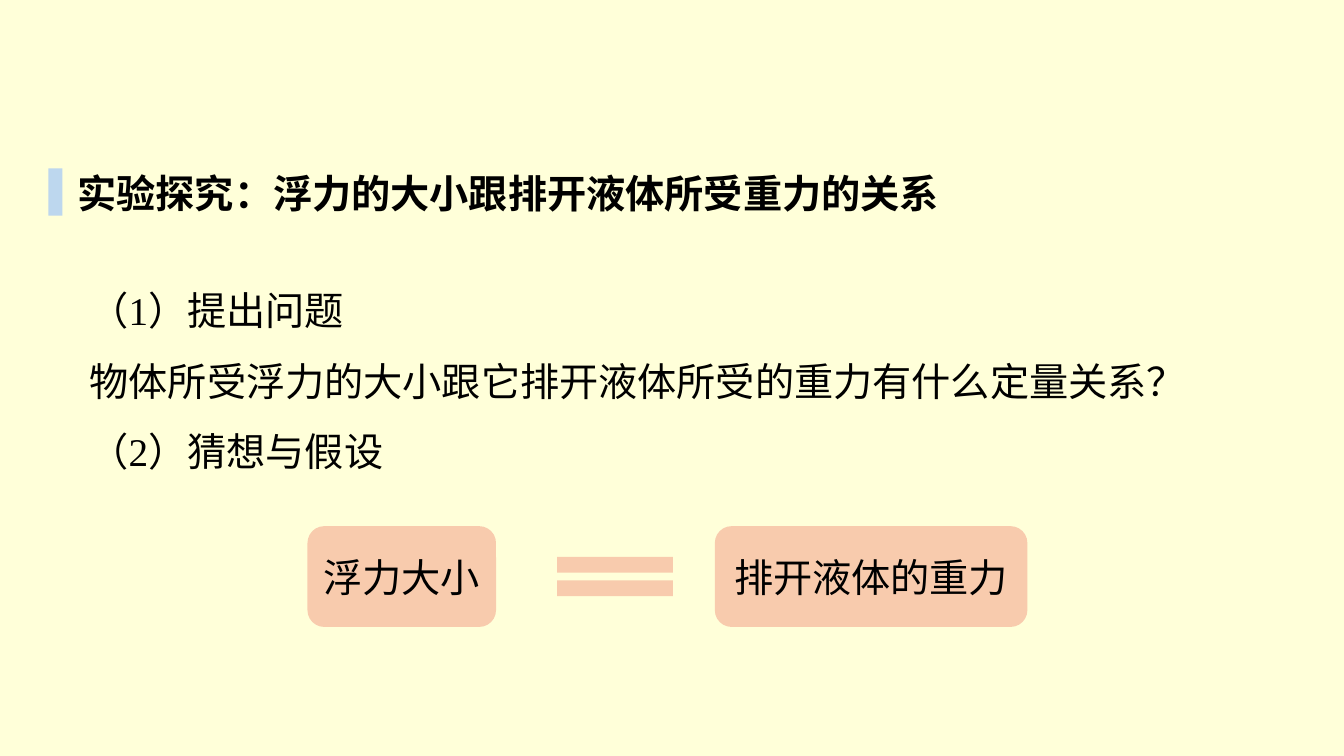
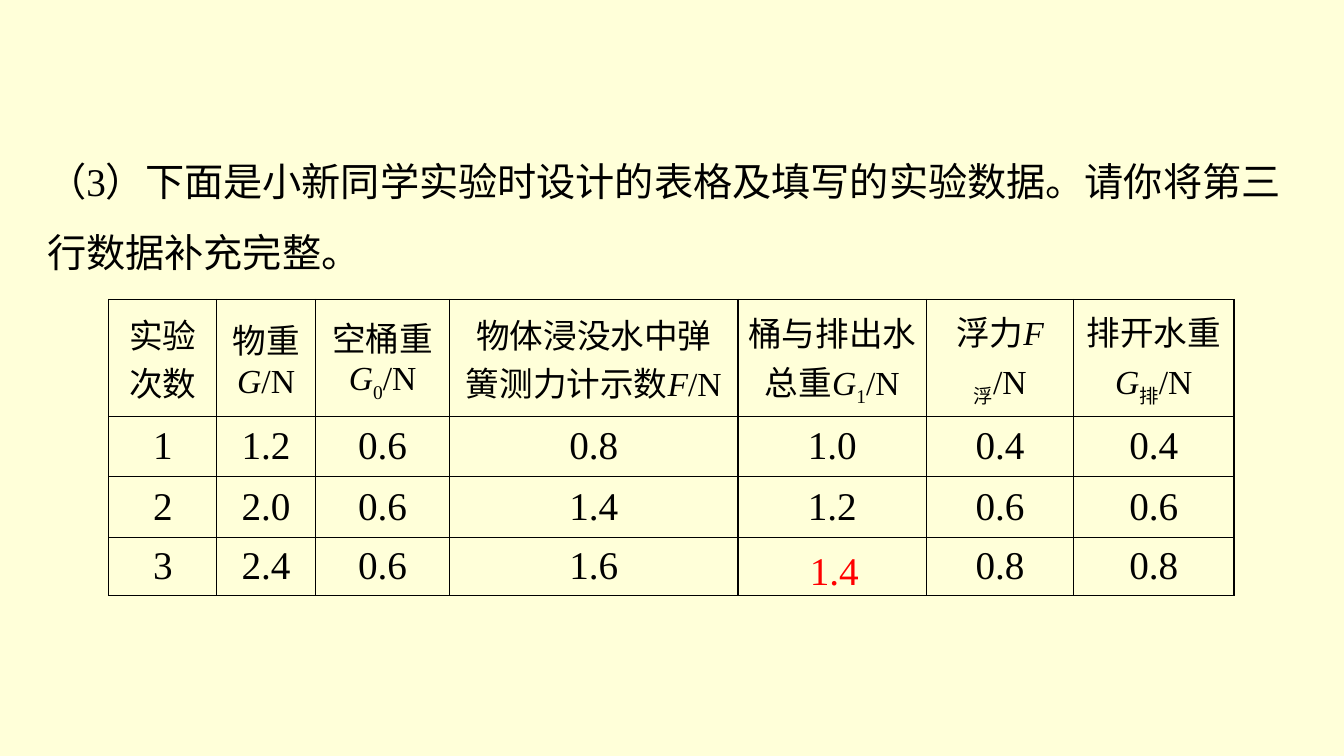
"""Build two slides on buoyancy and the weight of displaced liquid."""
from lxml.etree import SubElement
from pptx import Presentation
from pptx.dml.color import RGBColor
from pptx.enum.shapes import MSO_SHAPE as Shape
from pptx.enum.text import MSO_ANCHOR as Anchor, MSO_AUTO_SIZE as AutoSize, PP_ALIGN as Align
from pptx.oxml.ns import qn
from pptx.util import Pt

SCALE = 9144
BLACK, RED, CREAM, BLUE, PEACH = "000000", "FF0000", "FFFFD9", "BDD7EE", "F8CBAD"
SERIF, SANS = "Times New Roman", "Arial"
BODY, HEADER = 28, 24


def px(*lengths):
    return [length * SCALE for length in lengths]


def color(code):
    return RGBColor.from_string(code)


class Lesson:
    def __init__(self, width, height):
        self.deck = Presentation()
        self.deck.slide_width, self.deck.slide_height = px(width, height)
        self.page = None

    def add_page(self):
        self.page = self.deck.slides.add_slide(self.deck.slide_layouts[6])
        fill = self.page.background.fill
        fill.solid()
        fill.fore_color.rgb = color(CREAM)

    def style(self, para, size=BODY, face=SERIF, ink=BLACK, bold=None, align=None, spacing=None):
        para.alignment, para.line_spacing = align, spacing
        font = para.font
        font.size, font.name, font.bold = Pt(size), face, bold
        font.color.rgb = color(ink)

    def text(self, place, lines, wrap=False, **look):
        frame = self.page.shapes.add_textbox(*px(*place)).text_frame
        frame.word_wrap, frame.auto_size = wrap, AutoSize.SHAPE_TO_FIT_TEXT
        frame.text = "\n".join(lines)
        for para in frame.paragraphs:
            self.style(para, **look)

    def shape(self, kind, place, fill, label=None):
        box = self.page.shapes.add_shape(kind, *px(*place))
        box.shadow.inherit = False
        box.fill.solid()
        box.fill.fore_color.rgb = color(fill)
        box.line.fill.background()
        if label:
            frame = box.text_frame
            frame.text, frame.vertical_anchor = label, Anchor.MIDDLE
            self.style(frame.paragraphs[0], face=SANS, align=Align.CENTER)

    def title(self, wording):
        self.shape(Shape.RECTANGLE, (48, 167, 14, 47), BLUE)
        self.text((67, 163, 884, 57), [wording], bold=True)

    def border(self, cell):
        props = cell._tc.get_or_add_tcPr()
        for side in ("lnL", "lnR", "lnT", "lnB"):
            line = SubElement(props, qn(f"a:{side}"), w=str(Pt(1)))
            fill = SubElement(line, qn("a:solidFill"))
            SubElement(fill, qn("a:srgbClr"), val=BLACK)

    def quantity(self, para, name, symbol="", index=""):
        para.add_run().text = name
        if symbol:
            span = para.add_run()
            span.text, span.font.italic = symbol, True
            if index:
                span = para.add_run()
                span.text = index
                span._r.get_or_add_rPr().set("baseline", "-25000")
            para.add_run().text = "/N"

    def table(self, left, top, widths, heights, headings, records):
        place = px(left, top, sum(widths), sum(heights))
        grid = self.page.shapes.add_table(len(heights), len(widths), *place).table
        grid.first_row = grid.horz_banding = False
        for column, width in zip(grid.columns, px(*widths)):
            column.width = width
        for row, height in zip(grid.rows, px(*heights)):
            row.height = height
        for number, entries in enumerate([headings, *records]):
            for cell, entry in zip(grid.rows[number].cells, entries):
                self.border(cell)
                cell.fill.background()
                cell.vertical_anchor = Anchor.MIDDLE
                para = cell.text_frame.paragraphs[0]
                if number == 0:
                    self.quantity(para, *entry)
                elif entry:
                    para.text = entry
                self.style(para, BODY if number else HEADER, align=Align.CENTER)


def add_question(lesson):
    lesson.add_page()
    lesson.title("实验探究：浮力的大小跟排开液体所受重力的关系")
    lesson.text((79, 256, 1120, 222), [
        "（1）提出问题",
        "物体所受浮力的大小跟它排开液体所受的重力有什么定量关系？",
        "（2）猜想与假设",
    ], align=Align.JUSTIFY, spacing=1.5)
    lesson.shape(Shape.ROUNDED_RECTANGLE, (305, 522, 187, 100), PEACH, "浮力大小")
    lesson.shape(Shape.MATH_EQUAL, (532, 539, 156, 66), PEACH)
    lesson.shape(Shape.ROUNDED_RECTANGLE, (709, 522, 310, 100), PEACH, "排开液体的重力")


def add_records(lesson):
    lesson.add_page()
    lesson.text((37, 128, 1258, 151), [
        "（3）下面是小新同学实验时设计的表格及填写的实验数据。请你将第三行数据补充完整。",
    ], wrap=True, spacing=1.5)
    headings = [
        ("实验次数",), ("物重", "G"), ("空桶重", "G", "0"), ("物体浸没水中弹簧测力计示数", "F"),
        ("桶与排出水总重", "G", "1"), ("浮力", "F", "浮"), ("排开水重", "G", "排"),
    ]
    records = [
        ("1", "1.2", "0.6", "0.8", "1.0", "0.4", "0.4"),
        ("2", "2.0", "0.6", "1.4", "1.2", "0.6", "0.6"),
        ("3", "2.4", "0.6", "1.6", "", "0.8", "0.8"),
    ]
    lesson.table(108, 297, (107, 98, 133, 286, 187, 146, 159), (116, 60, 60, 58), headings, records)
    lesson.text((793, 537, 69, 57), ["1.4"], ink=RED, align=Align.CENTER)


def main():
    lesson = Lesson(1333, 750)
    add_question(lesson)
    add_records(lesson)
    lesson.deck.save("out.pptx")


if __name__ == "__main__":
    main()
